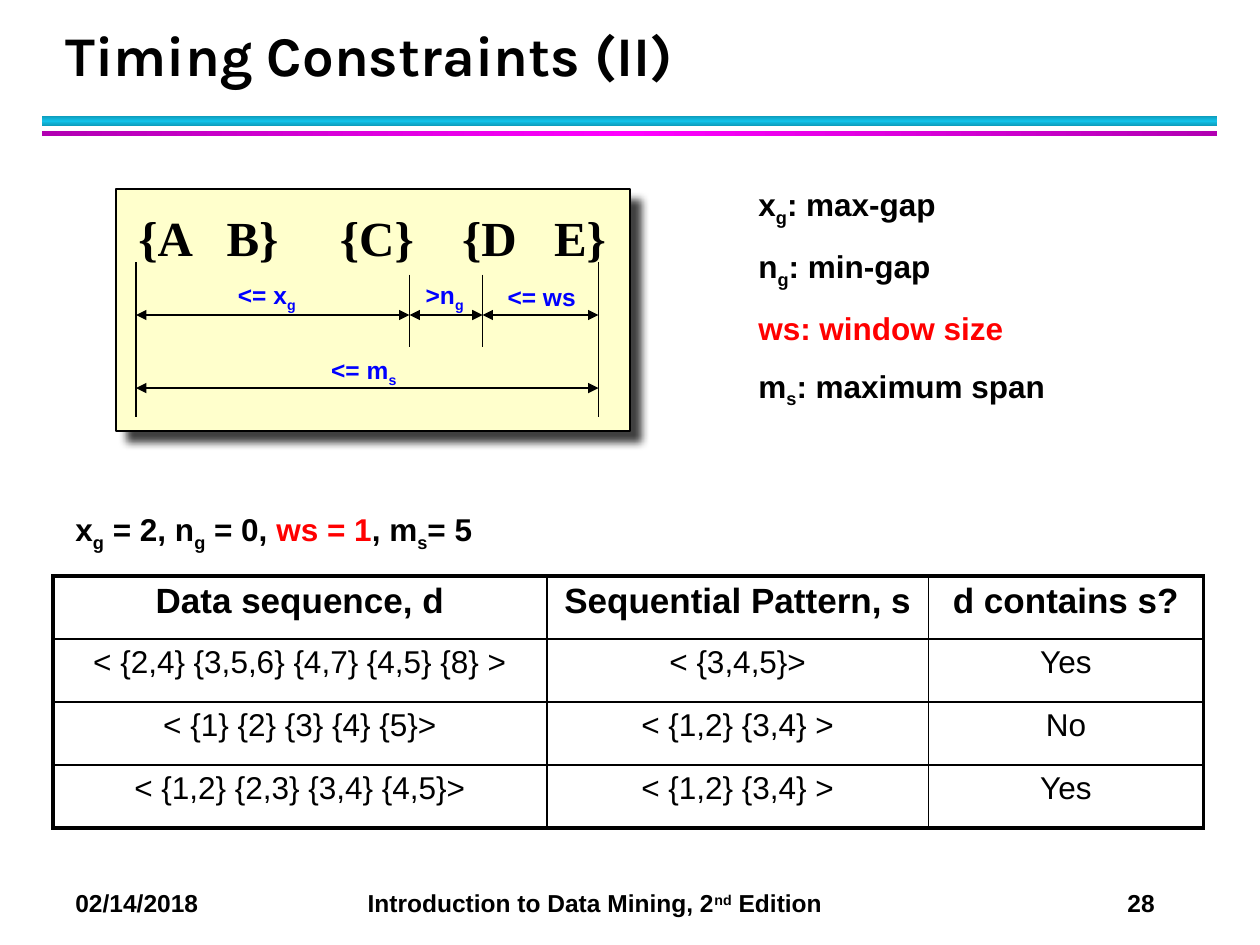
from dataclasses import dataclass
from typing import NamedTuple

from lxml.etree import SubElement as Sub
from pptx import Presentation
from pptx.dml.color import RGBColor as Rgb
from pptx.enum.shapes import MSO_CONNECTOR as Conn, MSO_SHAPE as Kind
from pptx.enum.text import MSO_ANCHOR as Anchor, MSO_AUTO_SIZE as Fit, PP_ALIGN as Align
from pptx.oxml.ns import qn
from pptx.util import Inches, Pt

HUES = {
    "ink": "000000", "red": "FF0000", "blue": "0000FF", "cream": "FFFFCC",
    "cyan": "12C2E9", "teal": "0E9BBA", "pink": "FF00FF", "plum": "B200B2",
}


class Bit(NamedTuple):
    text: str
    base: int = 0
    hue: str = ""


class Box(NamedTuple):
    left: float
    top: float
    width: float
    height: float


@dataclass
class Style:
    size: int = 18
    hue: str = "ink"
    face: str = "Arial"
    bold: bool = True
    after: float = 0
    fill: str = ""
    wrap: bool = True
    tabs: tuple[float, ...] = ()


@dataclass
class Bar:
    box: Box
    edge: str
    mid: str
    angle: int


@dataclass
class Rule:
    start: tuple[float, float]
    end: tuple[float, float]
    heads: bool = False


@dataclass
class Label:
    box: Box
    bits: list[Bit]


def tint(hue: str) -> Rgb:
    return Rgb.from_string(HUES[hue])


def write(para, bits: list[Bit], style: Style) -> None:
    font = para.font
    font.size, font.name, font.bold = Pt(style.size), style.face, style.bold
    font.color.rgb = tint(style.hue)
    para.space_before, para.space_after = Pt(0), Pt(style.after)
    if style.tabs:
        stops = Sub(para._p.get_or_add_pPr(), qn("a:tabLst"))
        stops.getparent().insert(2, stops)
        for stop in style.tabs:
            Sub(stops, qn("a:tab"), pos=str(Inches(stop)), algn="l")
    for bit in bits:
        run = para.add_run()
        run.text = bit.text
        if bit.hue:
            run.font.color.rgb = tint(bit.hue)
        if bit.base:
            run._r.get_or_add_rPr().set("baseline", str(bit.base * 1000))


def add_text(slide, box: Box, paras: list[list[Bit]], style: Style) -> None:
    shape = slide.shapes.add_textbox(*map(Inches, box))
    if style.fill:
        shape.fill.solid()
        shape.fill.fore_color.rgb = tint(style.fill)
    frame = shape.text_frame
    frame.word_wrap = style.wrap
    frame.auto_size = Fit.SHAPE_TO_FIT_TEXT
    for num, bits in enumerate(paras):
        para = frame.add_paragraph() if num else frame.paragraphs[0]
        write(para, bits, style)


def add_bar(slide, bar: Bar) -> None:
    shape = slide.shapes.add_shape(Kind.RECTANGLE, *map(Inches, bar.box))
    shape.shadow.inherit = False
    shape.line.fill.background()
    shape.fill.gradient()
    shape.fill.gradient_angle = bar.angle
    stops = shape._element.spPr.find(".//" + qn("a:gsLst"))
    stops.clear()
    for pos, hue in ((0, bar.edge), (50, bar.mid), (100, bar.edge)):
        stop = Sub(stops, qn("a:gs"), pos=str(pos * 1000))
        Sub(stop, qn("a:srgbClr"), val=HUES[hue])


def add_panel(slide, box: Box) -> None:
    shape = slide.shapes.add_shape(Kind.RECTANGLE, *map(Inches, box))
    shape.fill.solid()
    shape.fill.fore_color.rgb = tint("cream")
    shape.line.color.rgb = tint("ink")
    shape.line.width = Pt(0.75)
    shape.shadow.inherit = False
    glow = Sub(shape._element.spPr.find(qn("a:effectLst")), qn("a:outerShdw"),
               blurRad=str(Pt(5)), dist=str(Pt(8.5)), dir=str(45 * 60000),
               algn="ctr", rotWithShape="0")
    ink = Sub(glow, qn("a:srgbClr"), val=HUES["ink"])
    Sub(ink, qn("a:alpha"), val="75000")


def add_rule(slide, rule: Rule) -> None:
    ends = map(Inches, rule.start + rule.end)
    line = slide.shapes.add_connector(Conn.STRAIGHT, *ends)
    line.line.color.rgb = tint("ink")
    line.line.width = Pt(0.75)
    if rule.heads:
        for tag in ("a:headEnd", "a:tailEnd"):
            Sub(line.line._get_or_add_ln(), qn(tag), type="triangle")
    Sub(line._element.spPr, qn("a:effectLst"))


def add_edge(cell, side: str, width: float) -> None:
    edge = Sub(cell._tc.get_or_add_tcPr(), qn("a:ln" + side), w=str(Pt(width)))
    Sub(Sub(edge, qn("a:solidFill")), qn("a:srgbClr"), val=HUES["ink"])


def add_grid(slide, box: Box, widths: list[float], rows: list[list[str]]) -> None:
    high, wide = len(rows), len(widths)
    grid = slide.shapes.add_table(high, wide, *map(Inches, box)).table
    grid.first_row = grid.horz_banding = False
    for col, width in zip(grid.columns, widths):
        col.width = Inches(width)
    for y, row in enumerate(rows):
        style = Style(after=4, bold=y == 0, size=18 if y else 20)
        for x, text in enumerate(row):
            cell = grid.cell(y, x)
            para = cell.text_frame.paragraphs[0]
            write(para, [Bit(text)], style)
            para.alignment = Align.CENTER
            outer = {"L": x == 0, "R": x == wide - 1, "T": y == 0, "B": y == high - 1}
            for side, thick in outer.items():
                add_edge(cell, side, 2.25 if thick else 1)
            cell.fill.background()


def add_title(slide, box: Box, text: str) -> None:
    title = slide.shapes.title
    title.left, title.top, title.width, title.height = map(Inches, box)
    frame = title.text_frame
    frame.vertical_anchor = Anchor.BOTTOM
    frame.auto_size = Fit.NONE
    para = frame.paragraphs[0]
    write(para, [Bit(text)], Style(size=32, face="Karla"))
    para.alignment = Align.LEFT
    para.line_spacing = Pt(36)


LEFT, GAP, NEXT, RIGHT = 1.08, 3.25, 3.83, 4.75
BARS = [
    Bar(Box(0.33, 0.92, 9.33, 0.08), "teal", "cyan", 90),
    Bar(Box(0.33, 1.04, 9.33, 0.04), "plum", "pink", 0),
]
LABELS = [
    Label(Box(2.53, 2.77, 0.72, 0.33), [Bit("<= m"), Bit("s", -25)]),
    Label(Box(1.79, 2.17, 0.66, 0.33), [Bit("<= x"), Bit("g", -25)]),
    Label(Box(3.28, 2.17, 0.51, 0.33), [Bit(">n"), Bit("g", -25)]),
    Label(Box(3.93, 2.19, 0.74, 0.33), [Bit("<= ws")]),
]
SPANS = [(LEFT, RIGHT, 3.08), (LEFT, GAP, 2.5), (GAP, NEXT, 2.5), (NEXT, RIGHT, 2.5)]
POSTS = [(LEFT, 2.08, 3.31), (GAP, 2.18, 2.75), (NEXT, 2.18, 2.75), (RIGHT, 2.08, 3.31)]
RULES = [Rule((a, y), (b, y), True) for a, b, y in SPANS]
RULES += [Rule((x, a), (x, b)) for x, a, b in POSTS]
TERMS = [
    [Bit("x"), Bit("g", -25), Bit(": max-gap")],
    [Bit("n"), Bit("g", -25), Bit(": min-gap")],
    [Bit("ws: window size", hue="red")],
    [Bit("m"), Bit("s", -25), Bit(": maximum span")],
]
VALUES = [
    Bit("x"), Bit("g", -25), Bit(" = 2, n"), Bit("g", -25), Bit(" = 0, "),
    Bit("ws = 1", hue="red"), Bit(", m"), Bit("s", -25), Bit("= 5"),
]
ROWS = [
    ["Data sequence, d", "Sequential Pattern, s", "d contains s?"],
    ["< {2,4} {3,5,6} {4,7} {4,5} {8} >", "< {3,4,5}>", "Yes"],
    ["< {1} {2} {3} {4} {5}>", "< {1,2} {3,4} >", "No"],
    ["< {1,2} {2,3} {3,4} {4,5}>", "< {1,2} {3,4} >", "Yes"],
]
FOOT = [
    Bit("02/14/2018\tIntroduction to Data Mining, 2"), Bit("nd", 30),
    Bit(" Edition\t28"),
]


def main() -> None:
    deck = Presentation()
    deck.slide_width, deck.slide_height = Inches(10), Inches(7.5)
    slide = deck.slides.add_slide(deck.slide_layouts[5])
    for bar in BARS:
        add_bar(slide, bar)
    add_text(slide, Box(0.5, 7, 9.33, 0.34), [FOOT], Style(size=14, tabs=(2.32, 8.35)))
    add_title(slide, Box(0.42, 0.17, 9.06, 0.58), "Timing Constraints (II)")
    add_panel(slide, Box(0.92, 1.5, 4.08, 1.92))
    add_text(slide, Box(1, 1.6, 3.94, 0.57), [[Bit("{A\tB}\t{C}\t{D\tE}")]],
             Style(size=28, face="Times New Roman", fill="cream", tabs=(0.7, 1.6, 2.57, 3.3)))
    for label in LABELS:
        add_text(slide, label.box, [label.bits],
                 Style(size=14, hue="blue", fill="cream", wrap=False))
    for rule in RULES:
        add_rule(slide, rule)
    add_text(slide, Box(5.92, 1.42, 3.42, 1.84), TERMS, Style(after=11))
    add_grid(slide, Box(0.42, 4.57, 9.13, 2), [3.92, 3.03, 2.18], ROWS)
    add_text(slide, Box(0.5, 4, 8.58, 0.4), [VALUES], Style())
    deck.save("out.pptx")


if __name__ == "__main__":
    main()
